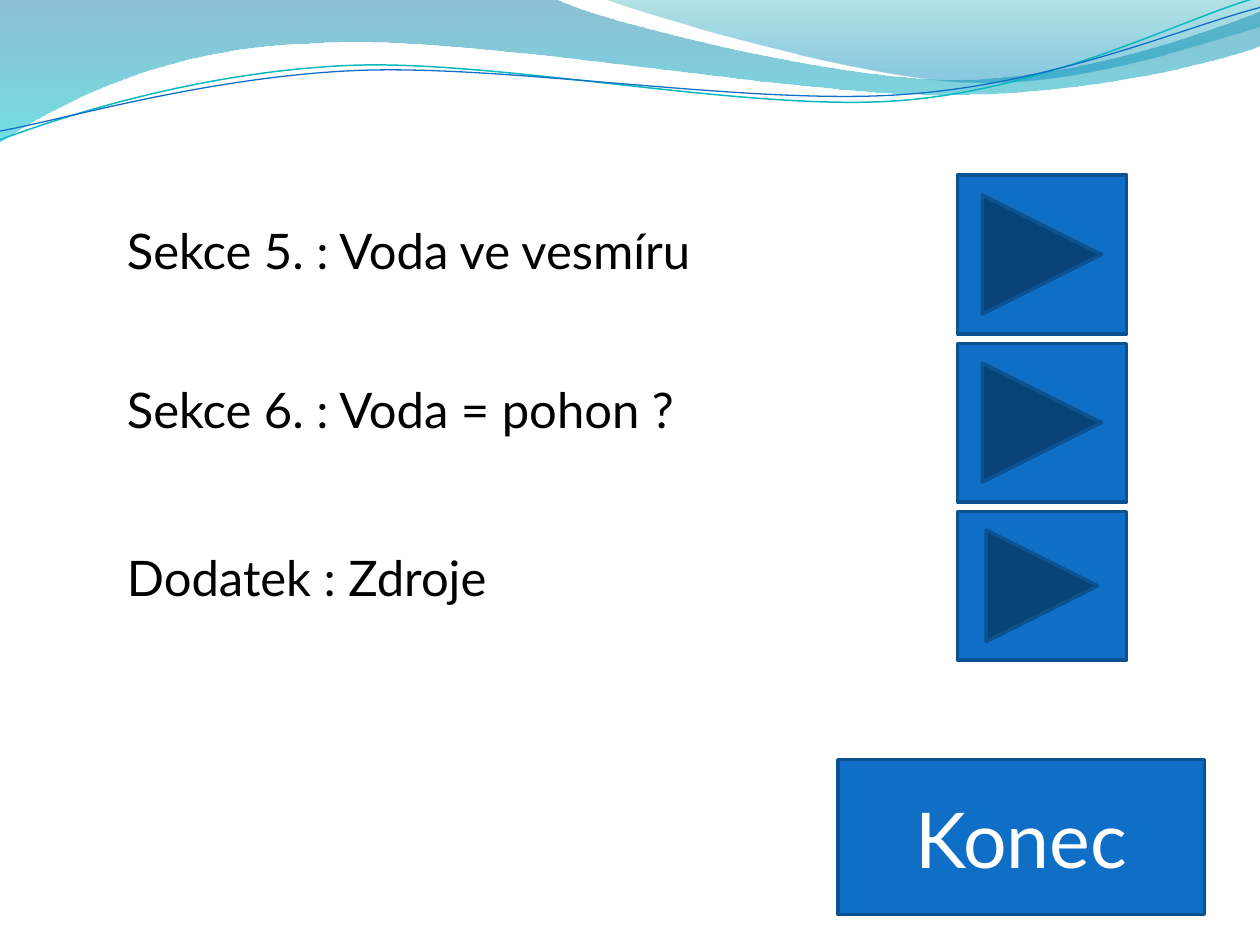
from dataclasses import dataclass

from lxml import etree
from pptx import Presentation
from pptx.dml.color import RGBColor
from pptx.enum.shapes import MSO_SHAPE
from pptx.enum.text import MSO_ANCHOR, MSO_AUTO_SIZE, PP_ALIGN
from pptx.oxml.ns import qn
from pptx.util import Inches, Pt

NEXT = MSO_SHAPE.ACTION_BUTTON_FORWARD_OR_NEXT
BLANK = MSO_SHAPE.ACTION_BUTTON_CUSTOM
MIDDLE, TOP = MSO_ANCHOR.MIDDLE, MSO_ANCHOR.TOP
CENTER, LEFT = PP_ALIGN.CENTER, PP_ALIGN.LEFT
FIT = MSO_AUTO_SIZE.SHAPE_TO_FIT_TEXT
BLANK_LAYOUT = 6
FIRST_MASTER_ID = 101


@dataclass(frozen=True)
class Theme:
    """Colours, font and type sizes of the slide."""
    font: str = "Lato"
    text: str = "000000"
    on_button: str = "FFFFFF"
    button: str = "0F6FC6"
    button_line: str = "0B5292"
    teal_line: str = "0AB8BF"
    main_wave: tuple = ((0, "0074A1", 45), (100, "00C6CF", 55))
    right_wave: tuple = ((0, "00A1A9", 30), (80, "008BBF", 45))
    body: int = 28
    large: int = 44


THEME = Theme()

MAIN_WAVE = [
    (0, 0), (4.4, -0.01),
    (4.76, 0.17, 6.64, 0.63, 7.58, 0.63), (8.53, 0.63, 9.58, 0.26, 10, 0.09),
    (10.01, 0.36),
    (9.83, 0.44, 8.7, 0.76, 7.46, 0.75), (6.22, 0.75, 3.82, 0.28, 2.57, 0.34),
    (1.29, 0.36, 0.46, 0.83, -0.01, 1.13),
]
RIGHT_WAVE = [
    (4.79, -0.01),
    (5.09, 0.11, 6.82, 0.62, 7.69, 0.65), (8.56, 0.69, 9.61, 0.32, 10, 0.21),
    (10, 0),
]
TEAL_CURVE = [
    (0, 1.11),
    (0.48, 0.93, 1.58, 0.57, 2.77, 0.52), (3.95, 0.47, 5.93, 0.89, 7.13, 0.8),
    (8.33, 0.71, 9.38, 0.15, 9.98, -0.02),
]
BLUE_CURVE = [
    (0, 1.04),
    (0.47, 0.96, 1.64, 0.61, 2.83, 0.56), (4.03, 0.51, 5.97, 0.84, 7.17, 0.75),
    (8.36, 0.67, 9.41, 0.21, 10, 0.06),
]
SECTIONS = [
    ("Sekce 5. : Voda ve vesmíru", 0.31, 1.26),
    ("Sekce 6. : Voda = pohon ?", 0.24, 1.26),
    ("Dodatek : Zdroje", 0.24, 1.18),
]


def rgb(value):
    """Turn a hex string into a colour."""
    return RGBColor.from_string(value)


def bend(sp, segments):
    """Join each three line steps of a cubic segment into one curve."""
    steps = list(sp.element.iter(qn("a:lnTo")))
    for seg in segments[1:]:
        count = len(seg) // 2
        group, steps = steps[:count], steps[count:]
        if count == 3:
            curve = etree.Element(qn("a:cubicBezTo"))
            group[0].addprevious(curve)
            for step in group:
                curve.append(step[0])
                step.getparent().remove(step)


def add_path(slide, segments, left, top, close):
    """Add a curved freeform relative to the given corner."""
    points = [(Inches(left + x), Inches(top + y))
              for seg in segments for x, y in zip(seg[::2], seg[1::2])]
    builder = slide.shapes.build_freeform(*points[0])
    builder.add_line_segments(points[1:], close=close)
    sp = builder.convert_to_shape()
    bend(sp, segments)
    sp.shadow.inherit = False
    return sp


def add_wave(slide, segments, stops, left, top):
    """Add a closed wave with a see-through vertical gradient."""
    sp = add_path(slide, segments, left, top, True)
    sp.line.fill.background()
    sp.fill.gradient()
    sp.fill.gradient_angle = 270
    for stop, (position, color, _) in zip(sp.fill.gradient_stops, stops):
        stop.position = position / 100
        stop.color.rgb = rgb(color)
    for node, (_, _, alpha) in zip(sp.element.iter(qn("a:srgbClr")), stops):
        etree.SubElement(node, qn("a:alpha"), val=str(alpha * 1000))
    return sp


def add_curve(slide, segments, color, width, left, top):
    """Add an open curved line."""
    sp = add_path(slide, segments, left, top, False)
    sp.fill.background()
    sp.line.color.rgb = rgb(color)
    sp.line.width = Pt(width)
    return sp


def set_text(sp, text, *, size, color, align=LEFT, anchor=TOP):
    """Write one formatted paragraph into a shape."""
    tf = sp.text_frame
    tf.word_wrap = True
    tf.vertical_anchor = anchor
    p = tf.paragraphs[0]
    p.alignment = align
    r = p.add_run()
    r.text = text
    r.font.name = THEME.font
    r.font.size = Pt(size)
    r.font.color.rgb = rgb(color)


def add_button(slide, kind, left, top, width, height):
    """Add an action button."""
    sp = slide.shapes.add_shape(
        kind, Inches(left), Inches(top), Inches(width), Inches(height))
    sp.shadow.inherit = False
    sp.fill.solid()
    sp.fill.fore_color.rgb = rgb(THEME.button)
    sp.line.color.rgb = rgb(THEME.button_line)
    sp.line.width = Pt(2)
    return sp


def add_header(slide, master, left, top):
    """Draw the waves and curves along the top edge of the master."""
    parts = [
        add_wave(slide, MAIN_WAVE, THEME.main_wave, left, top),
        add_wave(slide, RIGHT_WAVE, THEME.right_wave, left, top),
        add_curve(slide, TEAL_CURVE, THEME.teal_line, 0.85, left, top),
        add_curve(slide, BLUE_CURVE, THEME.button, 0.75, left, top),
    ]
    for number, sp in enumerate(parts, FIRST_MASTER_ID):
        next(sp.element.iter(qn("p:cNvPr"))).set("id", str(number))
        master.shapes.element.append(sp.element)


def add_sections(slide, left, top, width, pitch):
    """List the sections, each with a button at the right."""
    button_width = 1.34
    for i, (label, offset, height) in enumerate(SECTIONS):
        y = top + i * pitch
        add_button(slide, NEXT, left + width - button_width, y,
                   button_width, height)
        sp = slide.shapes.add_textbox(
            Inches(left), Inches(y + offset), Inches(6.46), Inches(0.57))
        set_text(sp, label, size=THEME.body, color=THEME.text)
        sp.text_frame.auto_size = FIT


def add_end_button(slide, left, top, width, height):
    """Add the closing button."""
    sp = add_button(slide, BLANK, left, top, width, height)
    set_text(sp, "Konec", size=THEME.large, color=THEME.on_button,
             align=CENTER, anchor=MIDDLE)


def main():
    """Build and save the slide."""
    prs = Presentation()
    prs.slide_width, prs.slide_height = Inches(10), Inches(7.5)
    slide = prs.slides.add_slide(prs.slide_layouts[BLANK_LAYOUT])
    add_header(slide, prs.slide_master, 0, 0)
    add_sections(slide, 0.91, 1.39, 8.03, 1.335)
    add_end_button(slide, 6.65, 6.03, 2.91, 1.23)
    prs.save("out.pptx")


if __name__ == "__main__":
    main()
